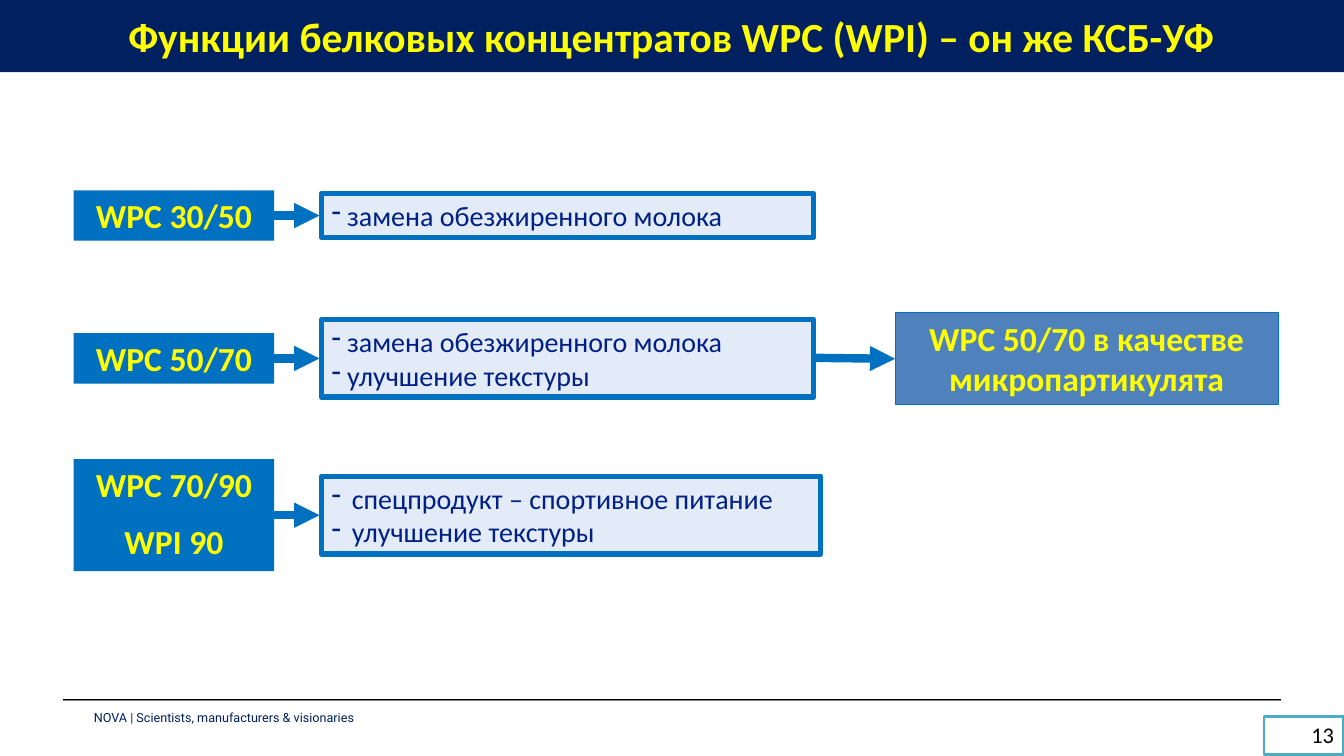
from lxml import etree
from pptx import Presentation
from pptx import util as u
from pptx.dml.color import RGBColor
from pptx.enum import shapes, text
from pptx.oxml import ns

Pt = u.Pt
NAVY, BLUE, YELLOW = "002060", "0070C0", "FFFF00"


def colour(hex_value):
    return RGBColor.from_string(hex_value)


def add_xml(parent, tag, **attributes):
    return etree.SubElement(parent, ns.qn(tag), attributes)


class SlideBuilder:
    TITLE = {"size": Pt(29.6), "bold": True, "name": "Calibri", "color": YELLOW}
    LABEL = {"size": Pt(24), "bold": True, "name": "Calibri", "color": YELLOW}
    LIST = {"size": Pt(20), "bold": False, "name": "Calibri", "color": "002086"}
    NUMBER = {"size": Pt(16), "bold": False, "name": "Calibri", "color": "000000"}
    FOOTER = {"size": Pt(9), "bold": False, "name": "Roboto", "color": NAVY}

    def __init__(self, slide):
        self.slide = slide

    def place(self, part, left, top, width, height):
        box = {"left": left, "top": top, "width": width, "height": height}
        for name, value in box.items():
            setattr(part, name, Pt(value))

    def paint(self, part, fill, line=None, weight=0):
        part.fill.solid()
        part.fill.fore_color.rgb = colour(fill)
        if line:
            part.line.color.rgb = colour(line)
            part.line.width = Pt(weight)
        else:
            part.line.fill.background()

    def set_text(self, part, lines, style, align="LEFT", anchor="TOP", gap=0, hang=0):
        frame = part.text_frame
        frame.text = "\n".join(lines)
        layout = {
            "word_wrap": True,
            "auto_size": text.MSO_AUTO_SIZE.NONE,
            "vertical_anchor": getattr(text.MSO_ANCHOR, anchor),
        }
        for name, value in layout.items():
            setattr(frame, name, value)
        for row, paragraph in enumerate(frame.paragraphs):
            spacing = {
                "alignment": getattr(text.PP_ALIGN, align),
                "line_spacing": 1.0,
                "space_before": Pt(gap if row else 0),
                "space_after": Pt(0),
            }
            for name, value in spacing.items():
                setattr(paragraph, name, value)
            if hang:
                properties = paragraph._p.get_or_add_pPr()
                properties.set("marL", str(Pt(hang)))
                properties.set("indent", str(-Pt(hang)))
                add_xml(properties, "a:buFontTx")
                add_xml(properties, "a:buChar", char="-")
            for run in paragraph.runs:
                for name, value in style.items():
                    if name == "color":
                        run.font.color.rgb = colour(value)
                    else:
                        setattr(run.font, name, value)

    def title(self, wording, width, height):
        heading = self.slide.shapes.title
        self.place(heading, 0, 0, width, height)
        self.paint(heading, NAVY)
        self.set_text(heading, [wording], self.TITLE, "CENTER", "MIDDLE")

    def functions(self, index, lines, left, middle, width, height, hang):
        body = self.slide.placeholders[index]
        self.place(body, left, middle - height / 2, width, height)
        self.paint(body, "C6D9F1", BLUE, 4)
        tint = body._element.spPr.find(ns.qn("a:solidFill"))[0]
        add_xml(tint, "a:alpha", val="50000")
        self.set_text(body, lines, self.LIST, hang=hang)

    def box(self, lines, box, fill, style, align="CENTER", line=None, weight=0):
        part = self.slide.shapes.add_shape(
            shapes.MSO_SHAPE.RECTANGLE, *map(Pt, box))
        part.shadow.inherit = False
        self.paint(part, fill, line, weight)
        self.set_text(part, lines, style, align, gap=12)

    def line(self, start, end, ink, weight, arrow=False):
        link = self.slide.shapes.add_connector(
            shapes.MSO_CONNECTOR.STRAIGHT, *map(Pt, start + end))
        link.line.color.rgb = colour(ink)
        link.line.width = Pt(weight)
        if arrow:
            add_xml(link._element.spPr.get_or_add_ln(), "a:tailEnd", type="triangle")
        add_xml(link._element.spPr, "a:effectLst")

    def footer(self, wording, box):
        note = self.slide.shapes.add_textbox(*map(Pt, box))
        for side in ("left", "top", "right", "bottom"):
            setattr(note.text_frame, f"margin_{side}", 0)
        self.set_text(note, [wording], self.FOOTER, anchor="MIDDLE")


def main():
    deck = Presentation()
    deck.slide_width, deck.slide_height = Pt(960), Pt(540)
    slide = deck.slides.add_slide(deck.slide_layouts[4])
    spare = slide.placeholders[3]._element
    spare.getparent().remove(spare)
    page = SlideBuilder(slide)

    for y, ink, weight in ((500.4, "808080", 0.5), (499.7, "000000", 0.75)):
        page.line((44.8, y), (915, y), ink, weight)
    page.title("Функции белковых концентратов WPC (WPI) – он же КСБ-УФ", 960, 51.6)

    milk, texture = "замена обезжиренного молока", "улучшение текстуры"
    sport = "спецпродукт – спортивное питание"
    products = (
        (1, 154, ["WPC 30/50"], 36, [milk], 31.6, 351.4, 11),
        (2, 256, ["WPC 50/70"], 36, [milk, texture], 55.6, 351.4, 11),
        (4, 368, ["WPC 70/90", "WPI 90"], 80, [sport, texture], 55.6, 356.4, 14.4),
    )
    for index, middle, names, name_height, uses, height, width, hang in products:
        page.functions(index, uses, 229.7, middle, width, height, hang)
        page.line((192.5, middle), (228.2, middle), BLUE, 6, arrow=True)
        page.box(names, (52.6, middle - name_height / 2, 143.3, name_height),
                 BLUE, page.LABEL)

    page.line((581, 255.6), (639.4, 256.3), BLUE, 6, arrow=True)
    page.box(["WPC 50/70 в качестве микропартикулята"], (639.4, 223.2, 273.6, 65.5),
             "4F81BD", page.LABEL, line=BLUE, weight=0.75)
    page.box(["13"], (902.9, 511.9, 57, 27.2), "FFFFFF", page.NUMBER,
             "RIGHT", "4BACC6", 2)
    page.footer("NOVA | Scientists, manufacturers & visionaries",
                (67, 499, 274.3, 27.4))
    deck.save("out.pptx")


if __name__ == "__main__":
    main()
